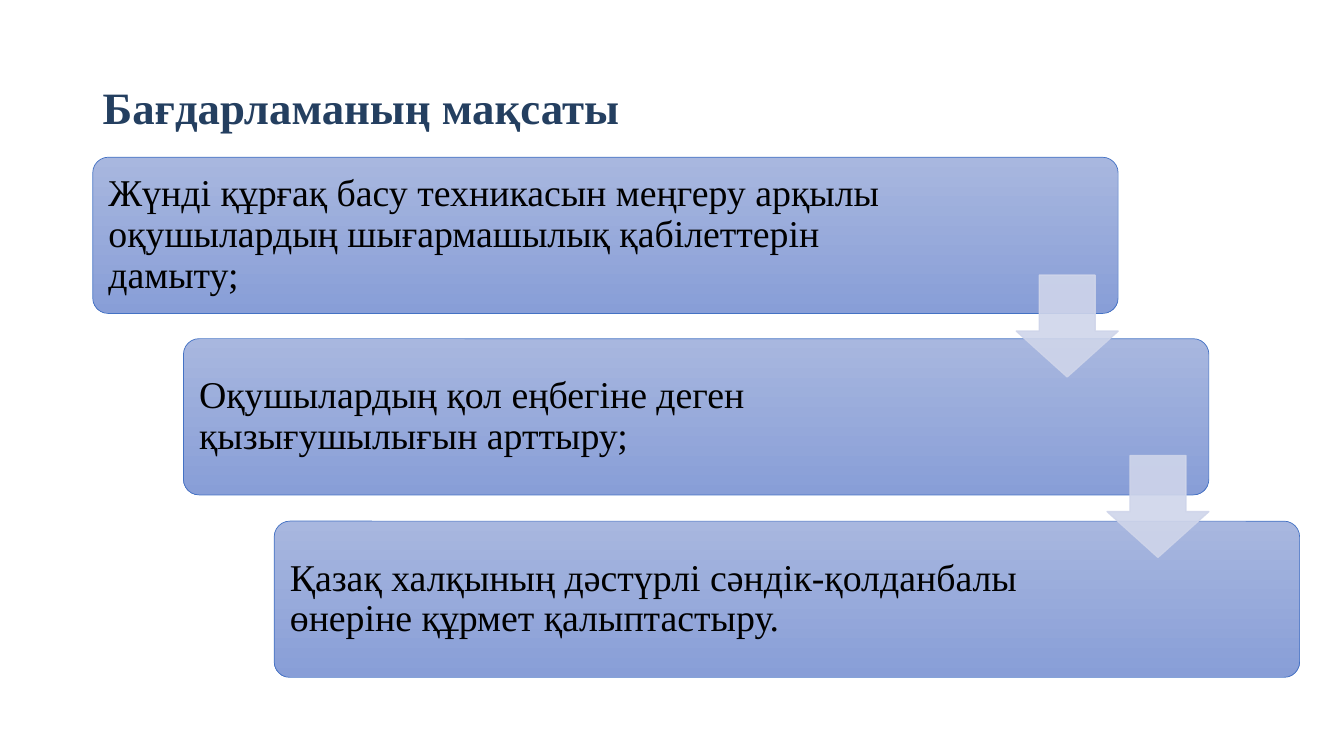
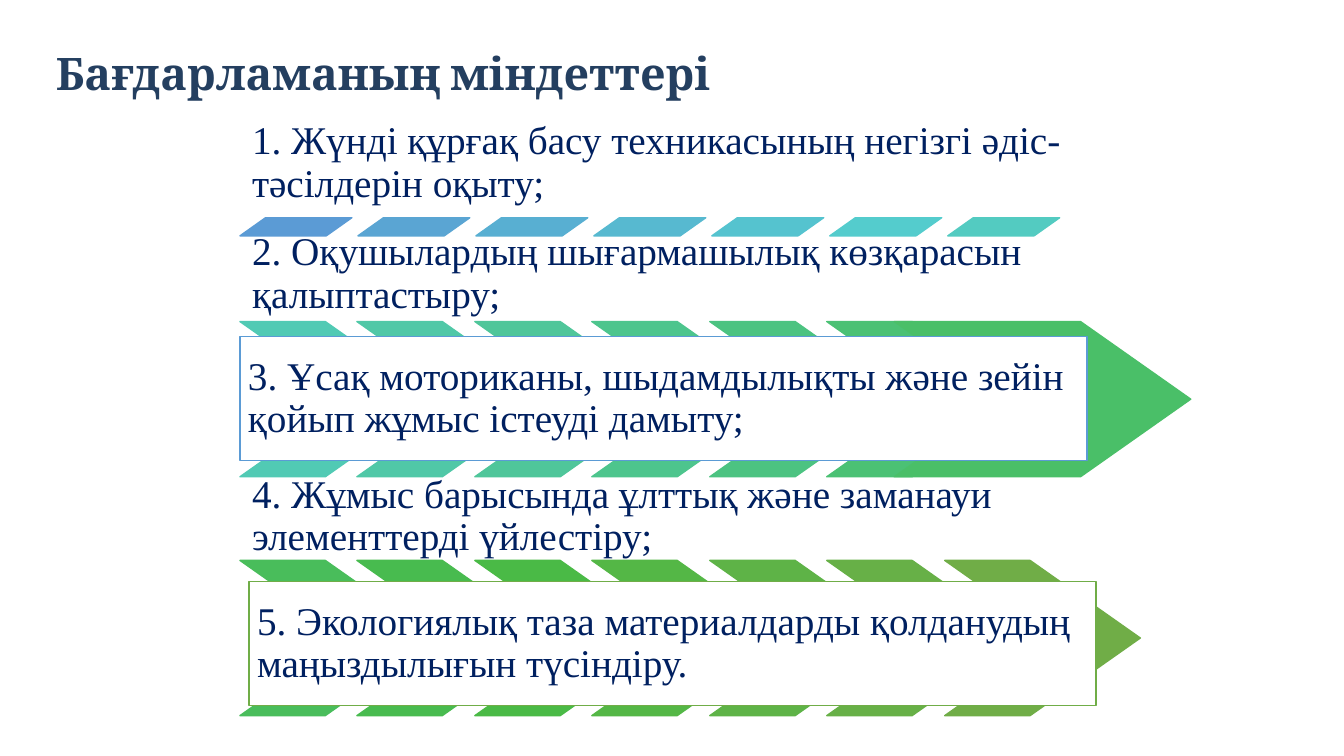
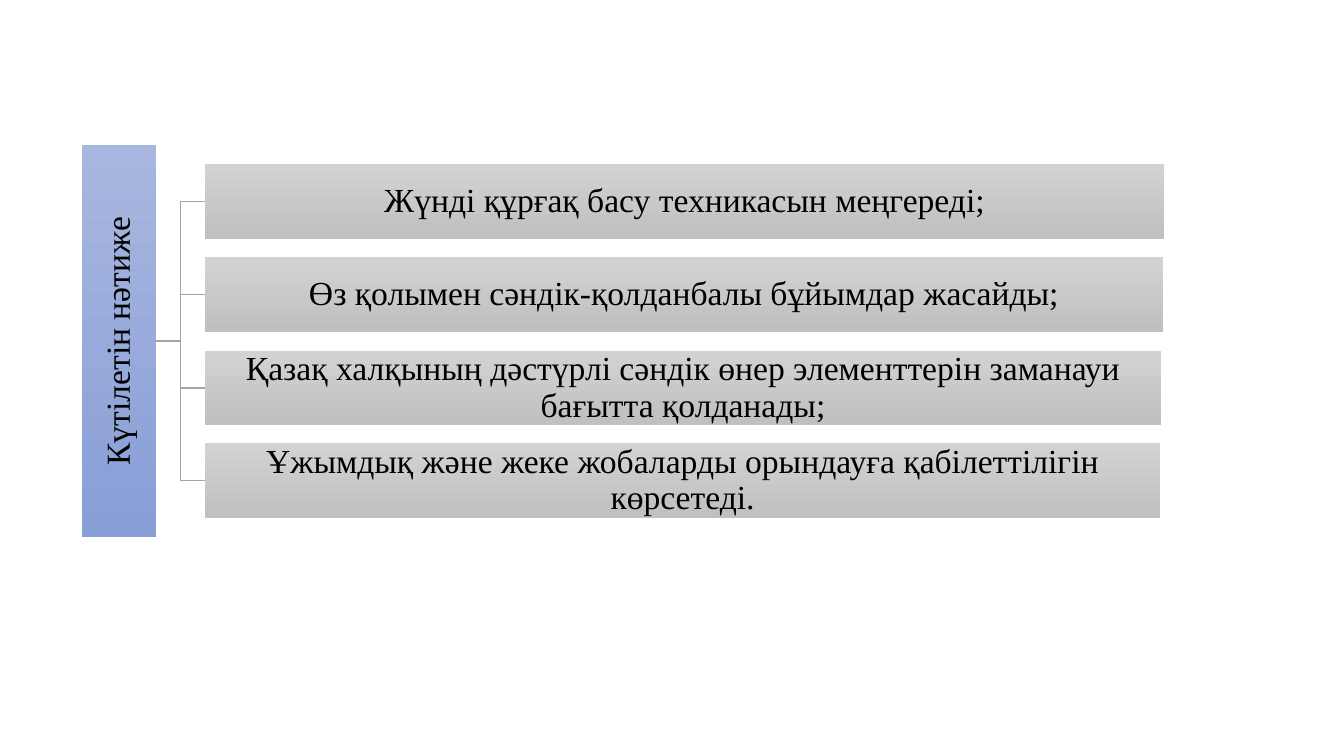
from dataclasses import dataclass

import pptx
import pptx.dml.color
import pptx.enum.shapes
import pptx.enum.text
import pptx.oxml
import pptx.oxml.ns
import pptx.util

PX = 9144  # EMU in one px, 100 px to the inch
KIND = pptx.enum.shapes.MSO_SHAPE
ALIGN = pptx.enum.text.PP_ALIGN
ANCHOR = pptx.enum.text.MSO_ANCHOR

SERIF = "Times New Roman"
HEAD = "243F60"
NAVY = "002060"
BLACK = "000000"
WHITE = "FFFFFF"
BLUE = ("A8B7DF", "889ED7")
GREY = ("D2D2D2", "C0C0C0")
EDGE = "4472C4"
PALE = "CFD5EA"
WIRE = "A5A5A5"


@dataclass
class Box:
    x: int
    y: int
    w: int
    h: int


@dataclass
class Style:
    size: int
    color: str
    font: str = SERIF
    bold: bool = False
    space: float = 0.9
    align: int = ALIGN.LEFT
    anchor: int = ANCHOR.MIDDLE


@dataclass
class Step:
    """A rounded box of the staircase; pad is its right inset."""
    text: str
    pad: int


@dataclass
class Band:
    """A row of seven equal marks; span runs from the first left edge to the last."""
    kind: int
    adj: float
    y: int
    w: int
    h: int
    span: int
    colors: str


TITLE = Style(32, HEAD, bold=True, space=1.15)
GOAL = Style(27, BLACK)
TASK = Style(28, NAVY)
LOW = Style(28, NAVY, anchor=ANCHOR.BOTTOM)
ITEM = Style(24, BLACK, align=ALIGN.CENTER)


def px(n):
    return pptx.util.Emu(n * PX)


def rgb(code: str):
    return pptx.dml.color.RGBColor.from_string(code)


def place(box: Box):
    return px(box.x), px(box.y), px(box.w), px(box.h)


def write(shape, text: str, style: Style, pads: tuple):
    """Put one paragraph in a shape; pads are left, top, right, bottom."""
    frame = shape.text_frame
    frame.word_wrap = True
    frame.vertical_anchor = style.anchor
    frame.margin_left, frame.margin_top, frame.margin_right, frame.margin_bottom = map(px, pads)
    par = frame.paragraphs[0]
    par.text = text
    par.alignment = style.align
    par.line_spacing = style.space
    font = par.font
    font.name, font.size, font.bold = style.font, pptx.util.Pt(style.size), style.bold
    font.color.rgb = rgb(style.color)


def label(page, box: Box, text: str, style: Style, pads: tuple):
    write(page.shapes.add_textbox(*place(box)), text, style, pads)


def draw(page, kind, box: Box, fill, line=None, width=1, adj=()):
    """Add a preset shape; fill is one colour or a pair from top to bottom."""
    shape = page.shapes.add_shape(kind, *place(box))
    shape.shadow.inherit = False
    for i, val in enumerate(adj):
        shape.adjustments[i] = val
    if isinstance(fill, tuple):
        shape.fill.gradient()
        shape.fill.gradient_angle = 270
        for stop, code in zip(shape.fill.gradient_stops, fill):
            stop.color.rgb = rgb(code)
    else:
        shape.fill.solid()
        shape.fill.fore_color.rgb = rgb(fill)
    if line:
        shape.line.color.rgb = rgb(line)
        shape.line.width = pptx.util.Pt(width)
    else:
        shape.line.fill.background()
    return shape


def fade(shape, pct: int):
    """Set the opacity of fill and line."""
    for node in list(shape.element.spPr.iter(pptx.oxml.ns.qn("a:srgbClr"))):
        alpha = pptx.oxml.parse_xml(f'<a:alpha {pptx.oxml.ns.nsdecls("a")} val="{pct * 1000}"/>')
        node.append(alpha)


def link(page, start, end):
    wire = page.shapes.add_connector(pptx.enum.shapes.MSO_CONNECTOR.ELBOW, 0, 0, 0, 0)
    wire.begin_connect(start, 3)
    wire.end_connect(end, 1)
    wire.line.color.rgb = rgb(WIRE)
    wire.line.width = pptx.util.Pt(1)
    wire.element.spPr.append(
        pptx.oxml.parse_xml(f'<a:effectLst {pptx.oxml.ns.nsdecls("a")}/>'))


def strip(page, band: Band):
    for i, code in enumerate(band.colors.split()):
        box = Box(238 + i * band.span // 6, band.y, band.w, band.h)
        draw(page, band.kind, box, code, code, adj=(band.adj,))


def card(page, box: Box, text: str, line: str):
    write(draw(page, KIND.RECTANGLE, box, WHITE, line), text, TASK, (8, 8, 8, 8))


def goals(page):
    label(page, Box(92, 40, 1150, 145), "Бағдарламаның мақсаты", TITLE, (10, 5, 10, 27))
    steps = (
        Step("Жүнді құрғақ басу техникасын меңгеру арқылы оқушылардың "
             "шығармашылық қабілеттерін дамыту;", 169),
        Step("Оқушылардың қол еңбегіне деген қызығушылығын арттыру;", 200),
        Step("Қазақ халқының дәстүрлі сәндік-қолданбалы өнеріне құрмет "
             "қалыптастыру.", 200),
    )
    for i, step in enumerate(steps):
        box = Box(92 + 90 * i, 156 + 180 * i + i // 2, 1017, 155)
        shape = draw(page, KIND.ROUNDED_RECTANGLE, box, BLUE, EDGE, 0.5, (0.1,))
        write(shape, step.text, GOAL, (11, 11, step.pad, 11))
    for i in range(len(steps) - 1):
        box = Box(1008 + 90 * i, 273 + 179 * i, 101, 101)
        fade(draw(page, KIND.DOWN_ARROW, box, PALE, PALE, adj=(0.55, 0.45)), 90)


def tasks(page):
    title = Style(32, HEAD, "Cambria", True, 1.15)
    label(page, Box(45, -5, 1150, 145), "Бағдарламаның міндеттері", title, (10, 5, 10, 5))

    def note(y: int, text: str):
        label(page, Box(238, y, 829, 75), text, LOW, (12, 12, 12, 12))

    note(141, "1. Жүнді құрғақ басу техникасының негізгі әдіс-тәсілдерін оқыту;")
    strip(page, Band(KIND.PARALLELOGRAM, 1.41, 216, 111, 18, 702,
                     "5B9BD5 5AA5D3 58AFD2 57B9D0 55C3CF 54CCCD 53CBC1"))
    note(251, "2. Оқушылардың шығармашылық көзқарасын қалыптастыру;")
    strip(page, Band(KIND.CHEVRON, 0.71, 319, 194, 154, 699,
                     "51CAB4 50C8A7 4FC69A 4DC58D 4CC381 4BC174"))
    draw(page, KIND.CHEVRON, Box(887, 319, 294, 154), "4ABF68", "4ABF68", adj=(0.71,))
    card(page, Box(238, 334, 840, 123),
         "3. Ұсақ моториканы, шыдамдылықты және зейін қойып жұмыс істеуді дамыту;", "5B9BD5")
    note(492, "4. Жұмыс барысында ұлттық және заманауи элементтерді үйлестіру;")
    strip(page, Band(KIND.CHEVRON, 0.71, 556, 194, 154, 699,
                     "49BD5B 48BB4F 4ABA46 54B746 5EB347 67B047 70AD47"))
    card(page, Box(247, 577, 840, 123),
         "5. Экологиялық таза материалдарды қолданудың маңыздылығын түсіндіру.", "70AD47")


def results(page):
    pads = (2, 2, 2, 2)
    root = draw(page, KIND.RECTANGLE, Box(81, 144, 74, 389), BLUE)
    write(root, "Күтілетін нәтиже", ITEM, pads)
    root.text_frame._txBody.bodyPr.set("vert", "vert270")
    rows = (
        (952, "Жүнді құрғақ басу техникасын меңгереді;"),
        (951, "Өз қолымен сәндік-қолданбалы бұйымдар жасайды;"),
        (949, "Қазақ халқының дәстүрлі сәндік өнер элементтерін заманауи "
              "бағытта қолданады;"),
        (948, "Ұжымдық және жеке жобаларды орындауға қабілеттілігін көрсетеді."),
    )
    for i, (wide, text) in enumerate(rows):
        leaf = draw(page, KIND.RECTANGLE, Box(203, 163 + i * 185 // 2, wide, 74), GREY)
        write(leaf, text, ITEM, pads)
        link(page, root, leaf)


def main():
    deck = pptx.Presentation()
    deck.slide_width, deck.slide_height = px(1333), px(750)
    for build in (goals, tasks, results):
        build(deck.slides.add_slide(deck.slide_layouts[6]))
    deck.save("out.pptx")


if __name__ == "__main__":
    main()
